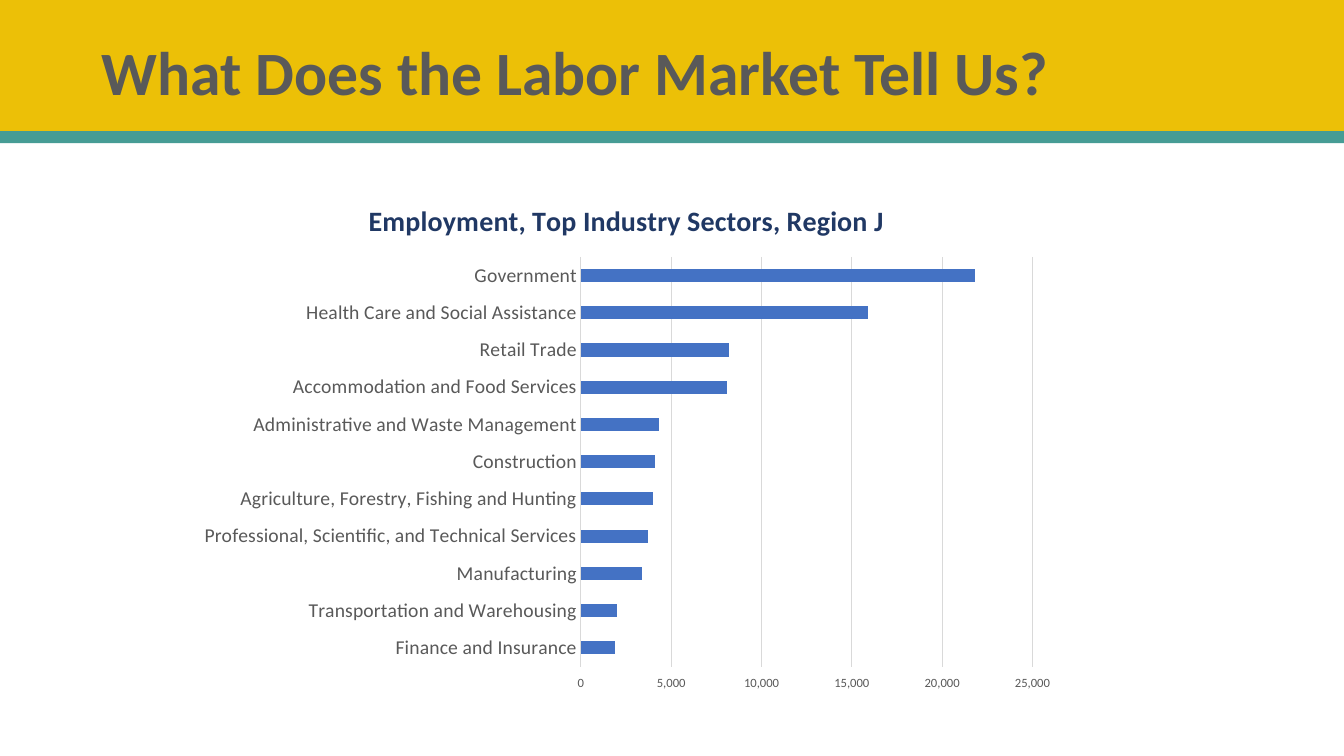
"""Build a slide showing employment by industry sector as a bar chart."""
from lxml.etree import SubElement
from pptx import Presentation
from pptx.chart.data import CategoryChartData
from pptx.dml.color import RGBColor
from pptx.enum.chart import XL_CHART_TYPE, XL_TICK_LABEL_POSITION, XL_TICK_MARK
from pptx.enum.shapes import MSO_SHAPE
from pptx.enum.text import MSO_ANCHOR, MSO_AUTO_SIZE, PP_ALIGN
from pptx.oxml import parse_xml
from pptx.oxml.ns import nsdecls, qn
from pptx.util import Inches, Pt

WIDTH, HEIGHT = 13.33, 7.5
FONT = "Calibri"
GRAY, RULE = "595959", "D9D9D9"
TITLE = "What Does the Labor Market Tell Us?"
CHART_TITLE = "Employment, Top Industry Sectors, Region J"
NUMBER_FORMAT = r"#,##0;[Red]\ \(#,##0\)"
BANDS = [(0, 1.41, "ECC007"), (1.3, 0.12, "469C95")]
TITLE_AREA = (0.91, 0.02, 11.5, 1.45)
CHART_AREA = (1.86, 1.79, 8.73, 5.12)
TITLE_SHARES = {"x": 0.2, "y": 0.03}
PLOT_SHARES = {"x": 0.447, "y": 0.148, "w": 0.513, "h": 0.794}
EMPLOYMENT = {
    "Government": 21800,
    "Health Care and Social Assistance": 15900,
    "Retail Trade": 8200,
    "Accommodation and Food Services": 8100,
    "Administrative and Waste Management": 4300,
    "Construction": 4100,
    "Agriculture, Forestry, Fishing and Hunting": 4000,
    "Professional, Scientific, and Technical Services": 3700,
    "Manufacturing": 3400,
    "Transportation and Warehousing": 2000,
    "Finance and Insurance": 1900,
}


def color(value):
    return RGBColor.from_string(value)


def style(font, size, value, bold=False):
    font.name, font.size, font.bold = FONT, Pt(size), bold
    font.color.rgb = color(value)


def rule(line):
    line.color.rgb = color(RULE)
    line.width = Pt(0.75)


def manual_layout(shares, inner=False):
    layout = parse_xml(f"<c:layout {nsdecls('c')}><c:manualLayout/></c:layout>")
    settings = {"layoutTarget": "inner"} if inner else {}
    settings.update(xMode="edge", yMode="edge", **shares)
    for name, value in settings.items():
        SubElement(layout[0], qn(f"c:{name}")).set("val", str(value))
    return layout


def place(element, layout, before):
    for old in element.findall(qn("c:layout")):
        element.remove(old)
    element.find(qn(before)).addprevious(layout)


def add_bands(page):
    for top, height, fill in BANDS:
        band = page.shapes.add_shape(
            MSO_SHAPE.RECTANGLE, 0, Inches(top), Inches(WIDTH), Inches(height))
        band.shadow.inherit = False
        band.fill.solid()
        band.fill.fore_color.rgb = color(fill)
        band.line.fill.background()


def add_title(page):
    title = page.shapes.title
    title.left, title.top, title.width, title.height = map(Inches, TITLE_AREA)
    page.shapes.element.append(title.element)
    frame = title.text_frame
    frame.text = TITLE
    frame.word_wrap = True
    frame.auto_size = MSO_AUTO_SIZE.NONE
    frame.vertical_anchor = MSO_ANCHOR.MIDDLE
    para = frame.paragraphs[0]
    para.line_spacing = 0.9
    para.alignment = PP_ALIGN.LEFT
    style(para.runs[0].font, 44, GRAY, True)


def add_employment_chart(page):
    data = CategoryChartData(number_format="#,##0")
    data.categories = list(EMPLOYMENT)
    data.add_series("Series 1", list(EMPLOYMENT.values()))
    chart = page.shapes.add_chart(
        XL_CHART_TYPE.BAR_CLUSTERED, *map(Inches, CHART_AREA), data).chart
    style(chart.font, 10, "000000")
    chart.has_legend = False
    chart.has_title = True
    heading = chart.chart_title.text_frame
    heading.text = CHART_TITLE
    style(heading.paragraphs[0].runs[0].font, 20, "203864", True)
    chart.chart_title.include_in_layout = False
    place(chart.element.find(".//" + qn("c:title")), manual_layout(TITLE_SHARES), "c:overlay")
    place(chart.element.find(".//" + qn("c:plotArea")),
          manual_layout(PLOT_SHARES, inner=True), "c:barChart")

    plot = chart.plots[0]
    plot.gap_width = 182
    plot.vary_by_categories = False
    bars = plot.series[0].format.fill
    bars.solid()
    bars.fore_color.rgb = color("4472C4")

    sectors, jobs = chart.category_axis, chart.value_axis
    for axis, size in ((sectors, 14), (jobs, 9)):
        axis.major_tick_mark = axis.minor_tick_mark = XL_TICK_MARK.NONE
        style(axis.tick_labels.font, size, GRAY)
    sectors.reverse_order = True
    rule(sectors.format.line)
    jobs.minimum_scale, jobs.maximum_scale, jobs.major_unit = 0, 25000, 5000
    jobs.tick_label_position = XL_TICK_LABEL_POSITION.HIGH
    jobs.format.line.fill.background()
    rule(jobs.major_gridlines.format.line)
    jobs.tick_labels.number_format = NUMBER_FORMAT
    jobs.tick_labels.number_format_is_linked = False


def main():
    deck = Presentation()
    deck.slide_width, deck.slide_height = Inches(WIDTH), Inches(HEIGHT)
    page = deck.slides.add_slide(deck.slide_layouts.get_by_name("Title Only"))
    add_bands(page)
    add_title(page)
    add_employment_chart(page)
    deck.save("out.pptx")


if __name__ == "__main__":
    main()
